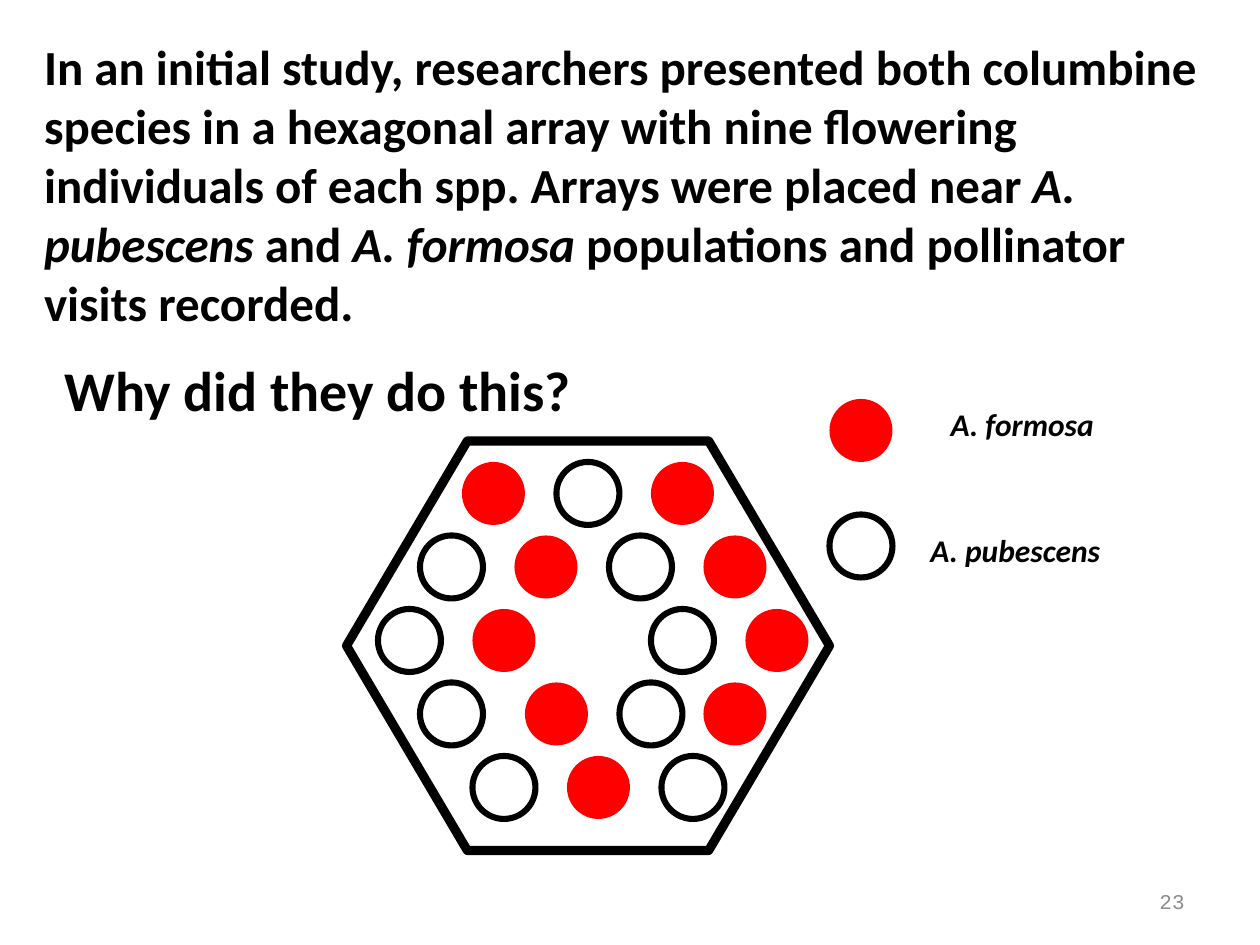
import pptx
import pptx.util
import pptx.dml.color
import pptx.enum.shapes
import pptx.enum.text

RGB = pptx.dml.color.RGBColor
SHAPE = pptx.enum.shapes.MSO_SHAPE
ALIGN = pptx.enum.text.PP_ALIGN
ANCHOR = pptx.enum.text.MSO_ANCHOR

BLACK = RGB(0, 0, 0)
WHITE = RGB(255, 255, 255)
RED = RGB(255, 0, 0)
GREY = RGB(140, 140, 140)

STUDY = [
    ("In an initial study, researchers presented both columbine species in a "
     "hexagonal array with nine flowering individuals of each spp. "
     "Arrays were placed near ", False),
    ("A. pubescens", True),
    (" and ", False),
    ("A. formosa", True),
    (" populations and pollinator visits recorded.", False),
]
QUESTION = "Why did they do this?"
PAGE_NUMBER = "23"

FORMOSA, PUBESCENS = "A. formosa", "A. pubescens"
ARRAY_ROWS = [
    (FORMOSA, [440, 530, 620]),
    (PUBESCENS, [400, 490, 580, 670]),
    (PUBESCENS, [360, 450, 620, 710]),
    (PUBESCENS, [400, 500, 590, 670]),
    (PUBESCENS, [450, 540, 630]),
]
LEGEND = [
    (FORMOSA, 380, (889, 380, 169, 48)),
    (PUBESCENS, 490, (870, 500, 194, 48)),
]
LEGEND_LEFT = 790
ROW_TOP, ROW_PITCH = 440, 70
FLOWER_SIZE = 60
PX = 914400 // 120


def emu(box):
    return [length * PX for length in box]


def add_words(paragraph, words, size, color=BLACK, font="Calibri", bold=True, italic=False):
    run = paragraph.add_run()
    run.text = words
    run.font.name = font
    run.font.size = pptx.util.Pt(size)
    run.font.bold = bold
    run.font.italic = italic
    run.font.color.rgb = color


def add_label(slide, box, words, size, align=ALIGN.LEFT, wrap=True, anchor=ANCHOR.TOP, **style):
    label = slide.shapes.add_textbox(*emu(box))
    frame = label.text_frame
    frame.word_wrap = wrap
    frame.vertical_anchor = anchor
    frame.paragraphs[0].alignment = align
    add_words(frame.paragraphs[0], words, size, **style)
    return label


def add_flower(slide, species, left, top):
    flower = slide.shapes.add_shape(SHAPE.OVAL, *emu((left, top, FLOWER_SIZE, FLOWER_SIZE)))
    flower.shadow.inherit = False
    flower.fill.solid()
    if species == FORMOSA:
        flower.fill.fore_color.rgb = RED
        flower.line.fill.background()
    else:
        flower.fill.fore_color.rgb = WHITE
        flower.line.color.rgb = BLACK
        flower.line.width = pptx.util.Pt(3.5)


def main():
    deck = pptx.Presentation()
    deck.slide_width, deck.slide_height = emu((1200, 900))
    slide = deck.slides.add_slide(deck.slide_layouts[5])

    title = slide.shapes.title
    title.left, title.top, title.width, title.height = emu((30, 0, 1140, 350))
    title.text_frame.word_wrap = True
    title.text_frame.auto_size = pptx.enum.text.MSO_AUTO_SIZE.NONE
    title.text_frame.vertical_anchor = ANCHOR.MIDDLE
    study = title.text_frame.paragraphs[0]
    study.alignment = ALIGN.LEFT
    for words, italic in STUDY:
        add_words(study, words, 28, italic=italic)

    question = add_label(slide, (50, 333, 1030, 87), QUESTION, 32)
    question.fill.solid()
    question.fill.fore_color.rgb = WHITE

    hexagon = slide.shapes.add_shape(SHAPE.HEXAGON, *emu((330, 420, 460, 390)))
    hexagon.adjustments[0] = 0.295
    hexagon.shadow.inherit = False
    hexagon.fill.background()
    hexagon.line.color.rgb = BLACK
    hexagon.line.width = pptx.util.Pt(5.25)

    for row, (first, lefts) in enumerate(ARRAY_ROWS):
        second = PUBESCENS if first == FORMOSA else FORMOSA
        for column, left in enumerate(lefts):
            species = (first, second)[column % 2]
            add_flower(slide, species, left, ROW_TOP + row * ROW_PITCH)

    for species, flower_top, label_box in LEGEND:
        add_flower(slide, species, LEGEND_LEFT, flower_top)
        add_label(slide, label_box, species, 18, ALIGN.CENTER, wrap=False, italic=True)

    add_label(slide, (860, 834, 280, 48), PAGE_NUMBER, 12, ALIGN.RIGHT,
              anchor=ANCHOR.MIDDLE, color=GREY, font="Courier New", bold=False)

    deck.save("out.pptx")


if __name__ == "__main__":
    main()
